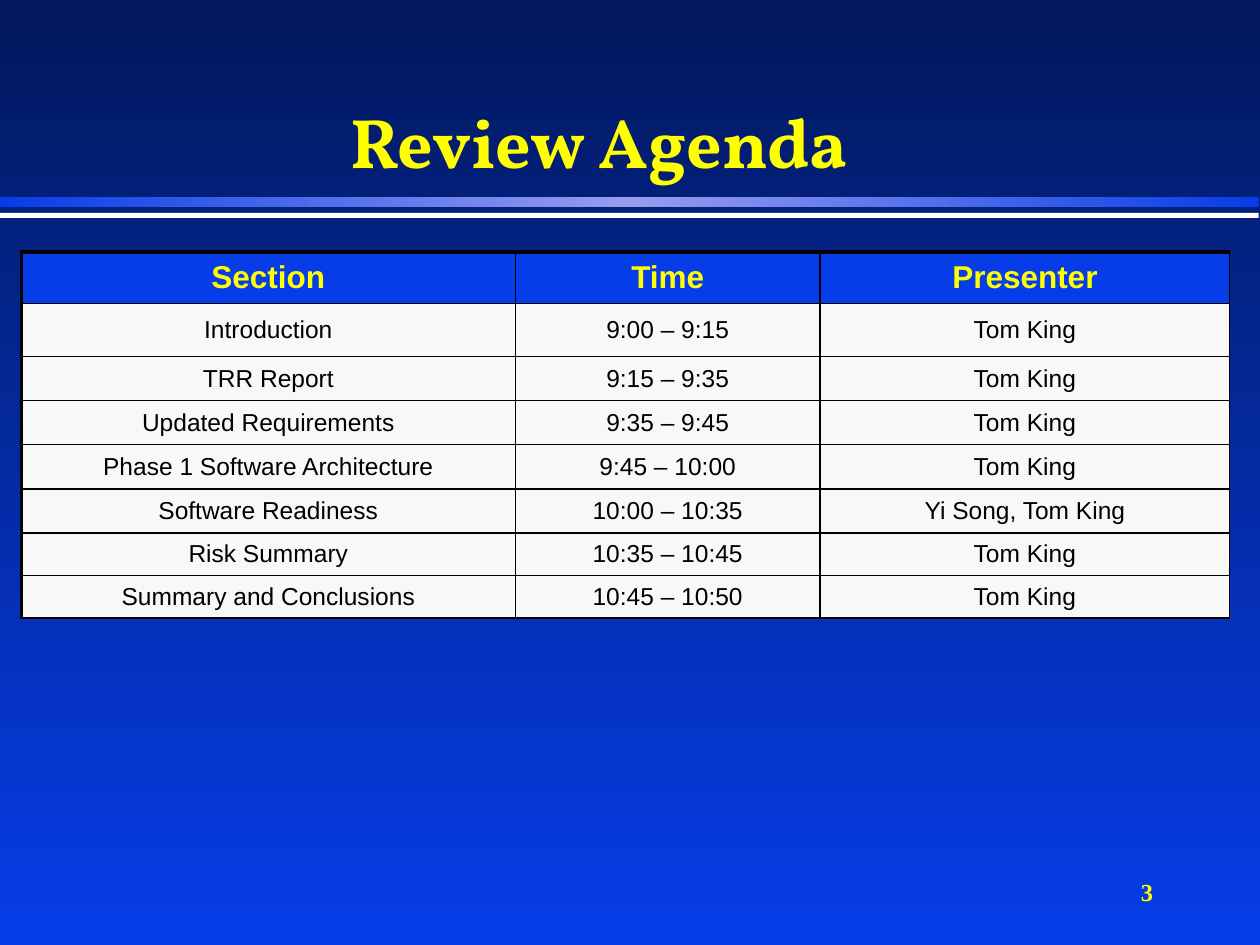
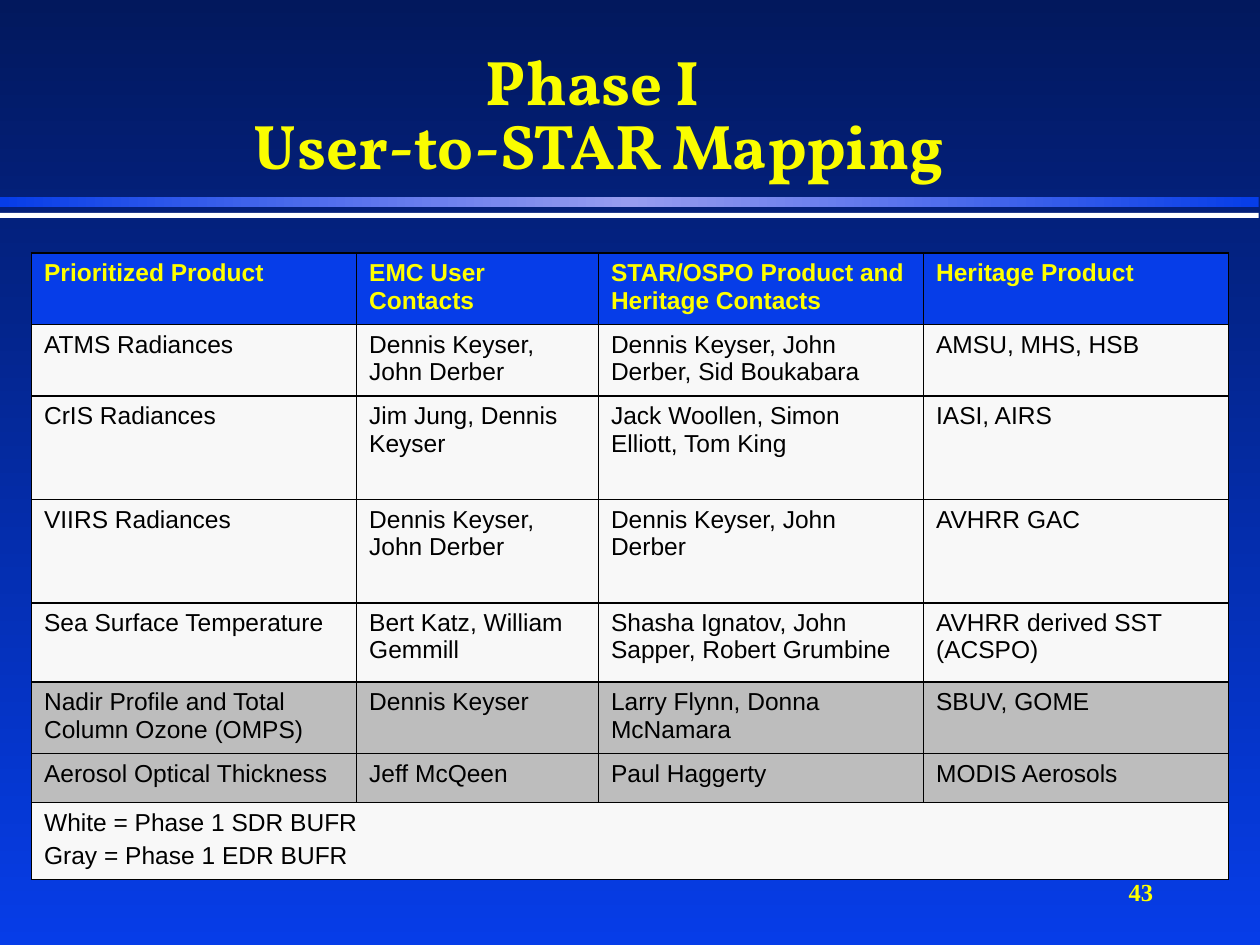
from lxml import etree
from pptx import Presentation
from pptx.dml.color import RGBColor
from pptx.enum.shapes import MSO_SHAPE
from pptx.enum.text import MSO_ANCHOR, PP_ALIGN
from pptx.oxml.ns import qn
from pptx.util import Inches, Pt

RECTANGLE = MSO_SHAPE.RECTANGLE
TOP, MIDDLE, BOTTOM = MSO_ANCHOR.TOP, MSO_ANCHOR.MIDDLE, MSO_ANCHOR.BOTTOM
LEFT, CENTER, RIGHT = PP_ALIGN.LEFT, PP_ALIGN.CENTER, PP_ALIGN.RIGHT

NAVY, BLUE, LILAC = "02185D", "063DE8", "979CEF"
YELLOW, LEMON = "FFFF00", "FAFD00"
WHITE, PALE, GRAY, BLACK = "FFFFFF", "F8F8F8", "BDBDBD", "000000"
THIN, THICK = 1, 2.25

TITLE_BOX = (1.42, 0.25, 6.67, 1.25)
NUMBER_BOX = (7.17, 6.83, 2.08, 0.5)
GRADIENT_BAND = (0, 1.56, 9.99, 0.08)
WHITE_BAND = (0, 1.69, 9.99, 0.04)

AGENDA = {
    "title": "Review Agenda", "title_size": 40, "title_color": YELLOW, "number": "3",
    "origin": (0.17, 2.0),
    "columns": [3.92, 2.42, 3.25],
    "heights": [0.41, 0.42, 0.35, 0.35, 0.35, 0.35, 0.34, 0.33],
    "header_size": 18, "align": CENTER, "anchor": MIDDLE, "outer": THICK,
    "gray_rows": (),
    "rows": [
        ("Section", "Time", "Presenter"),
        ("Introduction", "9:00 – 9:15", "Tom King"),
        ("TRR Report", "9:15 – 9:35", "Tom King"),
        ("Updated Requirements", "9:35 – 9:45", "Tom King"),
        ("Phase 1 Software Architecture", "9:45 – 10:00", "Tom King"),
        ("Software Readiness", "10:00 – 10:35", "Yi Song, Tom King"),
        ("Risk Summary", "10:35 – 10:45", "Tom King"),
        ("Summary and Conclusions", "10:45 – 10:50", "Tom King"),
    ],
}
MAPPING = {
    "title": "Phase I \vUser-to-STAR Mapping", "title_size": 36, "title_color": LEMON,
    "number": "43",
    "origin": (0.25, 2.01),
    "columns": [2.58, 1.92, 2.58, 2.42],
    "heights": [0.42, 0.42, 0.82, 0.82, 0.63, 0.51, 0.39, 0.56],
    "header_size": 14, "align": LEFT, "anchor": TOP, "outer": THIN,
    "gray_rows": (5, 6),
    "rows": [
        ("Prioritized Product", "EMC User Contacts",
         "STAR/OSPO Product and Heritage Contacts", "Heritage Product"),
        ("ATMS Radiances", "Dennis Keyser, John Derber",
         "Dennis Keyser, John Derber, Sid Boukabara", "AMSU, MHS, HSB"),
        ("CrIS Radiances", "Jim Jung, Dennis Keyser",
         "Jack Woollen, Simon Elliott, Tom King", "IASI, AIRS"),
        ("VIIRS Radiances", "Dennis Keyser, John Derber",
         "Dennis Keyser, John Derber", "AVHRR GAC"),
        ("Sea Surface Temperature", "Bert Katz, William Gemmill",
         "Shasha Ignatov, John Sapper, Robert Grumbine", "AVHRR derived SST (ACSPO)"),
        ("Nadir Profile and Total Column Ozone (OMPS)", "Dennis Keyser",
         "Larry Flynn, Donna McNamara", "SBUV, GOME"),
        ("Aerosol Optical Thickness", "Jeff McQeen", "Paul Haggerty", "MODIS Aerosols"),
        ("White = Phase 1 SDR BUFR\nGray = Phase 1 EDR BUFR",),
    ],
}


def rgb(color):
    return RGBColor.from_string(color)


def inches(values):
    return [Inches(value) for value in values]


def fill_solid(fill, color):
    fill.solid()
    fill.fore_color.rgb = rgb(color)


def fill_gradient(fill, parent, colors, angle):
    fill.gradient()
    fill.gradient_angle = angle
    stops = next(parent.iter(qn("a:gsLst")))
    for stop in list(stops):
        stops.remove(stop)
    for index, color in enumerate(colors):
        position = str(100000 * index // (len(colors) - 1))
        stop = etree.SubElement(stops, qn("a:gs"), pos=position)
        etree.SubElement(stop, qn("a:srgbClr"), val=color)


def style_text(frame, color, align, line_spacing=None, **font):
    for index, paragraph in enumerate(frame.paragraphs):
        paragraph.alignment = align
        paragraph.line_spacing = line_spacing
        if index:
            paragraph.space_before = Pt(3)
        for run in paragraph.runs:
            for name, value in font.items():
                setattr(run.font, name, value)
            run.font.color.rgb = rgb(color)


def add_text(slide, box, text, anchor, color, align, **style):
    frame = slide.shapes.add_textbox(*inches(box)).text_frame
    frame.word_wrap = True
    frame.vertical_anchor = anchor
    frame.text = text
    style_text(frame, color, align, bold=True, **style)


def add_band(slide, box):
    band = slide.shapes.add_shape(RECTANGLE, *inches(box))
    band.shadow.inherit = False
    band.line.fill.background()
    return band


def set_borders(cell, widths):
    properties = cell._tc.get_or_add_tcPr()
    for index, (side, width) in enumerate(widths.items()):
        line = etree.Element(qn(f"a:ln{side}"), w=str(Pt(width)))
        solid = etree.SubElement(line, qn("a:solidFill"))
        etree.SubElement(solid, qn("a:srgbClr"), val=BLACK)
        properties.insert(index, line)


def add_schedule(slide, content):
    rows, columns, heights = content["rows"], content["columns"], content["heights"]
    box = (*content["origin"], sum(columns), sum(heights))
    table = slide.shapes.add_table(len(rows), len(columns), *inches(box)).table
    table.horz_banding = False
    for column, width in zip(table.columns, columns):
        column.width = Inches(width)
    for r, (texts, height) in enumerate(zip(rows, heights)):
        table.rows[r].height = Inches(height)
        if len(texts) < len(columns):
            table.cell(r, 0).merge(table.cell(r, len(columns) - 1))
        header = r == 0
        background = BLUE if header else GRAY if r in content["gray_rows"] else PALE
        for c in range(len(columns)):
            cell = table.cell(r, c)
            fill_solid(cell.fill, background)
            set_borders(cell, {
                "L": THIN if c else content["outer"], "R": THIN,
                "T": content["outer"] if header else THIN, "B": THIN})
            cell.vertical_anchor = content["anchor"]
            if c < len(texts):
                cell.text = texts[c]
                style_text(cell.text_frame, YELLOW if header else BLACK,
                           content["align"], name="Arial", bold=header,
                           size=Pt(content["header_size"] if header else 14))


def add_slide(deck, content):
    slide = deck.slides.add_slide(deck.slide_layouts[6])
    fill_gradient(slide.background.fill, slide.element, [NAVY, BLUE], 270)
    band = add_band(slide, GRADIENT_BAND)
    fill_gradient(band.fill, band.element, [BLUE, LILAC, BLUE], 0)
    fill_solid(add_band(slide, WHITE_BAND).fill, WHITE)
    add_text(slide, NUMBER_BOX, content["number"], MIDDLE, YELLOW, RIGHT,
             name="Times New Roman", size=Pt(14))
    add_text(slide, TITLE_BOX, content["title"], BOTTOM, content["title_color"], CENTER,
             line_spacing=0.85, name="Vollkorn", size=Pt(content["title_size"]))
    add_schedule(slide, content)


def main():
    deck = Presentation()
    deck.slide_width, deck.slide_height = inches((10, 7.5))
    for content in (AGENDA, MAPPING):
        add_slide(deck, content)
    deck.save("out.pptx")


if __name__ == "__main__":
    main()
